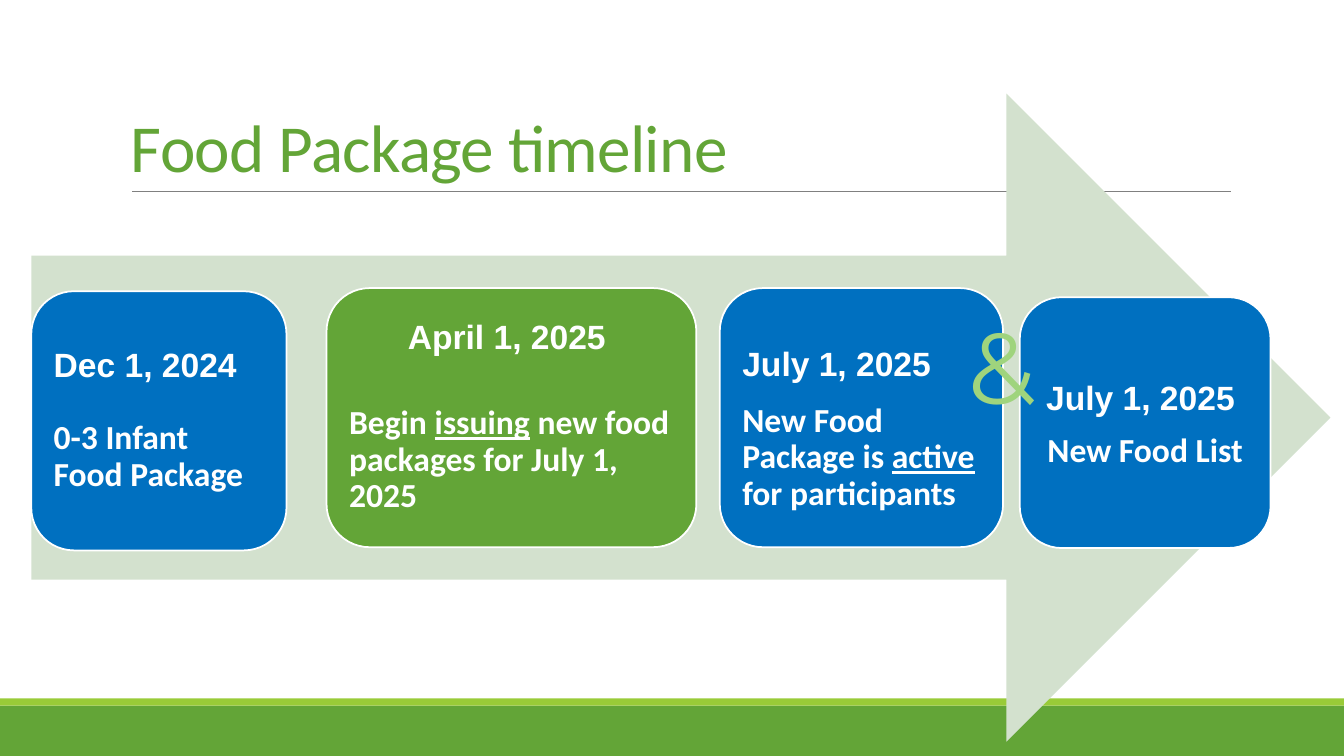
from lxml.etree import SubElement
from pptx import Presentation
from pptx.dml.color import RGBColor
from pptx.enum.shapes import MSO_CONNECTOR, MSO_SHAPE
from pptx.enum.text import MSO_ANCHOR, PP_ALIGN
from pptx.oxml.ns import qn
from pptx.util import Cm, Pt

GREEN = RGBColor(0x63, 0xA5, 0x37)
LIME = RGBColor(0x99, 0xCB, 0x38)
PALE_GREEN = RGBColor(0xD3, 0xE1, 0xCE)
SOFT_GREEN = RGBColor(0x9F, 0xD4, 0x7D)
BLUE = RGBColor(0x00, 0x70, 0xC0)
GREY = RGBColor(0x80, 0x80, 0x80)
WHITE = RGBColor(0xFF, 0xFF, 0xFF)

SLIDE_WIDTH, SLIDE_HEIGHT = 33.87, 19.05
TIGHT = 0.9
AFTER = Pt(8.4)

# Each milestone: left, top, width, height in cm, fill, date format, action format, date, action runs
MILESTONES = [
    (0.79, 7.34, 6.43, 6.53, BLUE,
     {"line_spacing": TIGHT, "space_after": Pt(26)},
     {"line_spacing": TIGHT, "space_after": AFTER},
     "Dec 1, 2024", [("0-3 Infant Food Package", False)]),
    (8.23, 7.26, 9.32, 6.53, GREEN,
     {"line_spacing": TIGHT, "space_after": Pt(35), "alignment": PP_ALIGN.CENTER},
     {"line_spacing": TIGHT, "space_after": AFTER},
     "April 1, 2025 ",
     [("Begin ", False), ("issuing", True), (" new food packages for July 1, 2025", False)]),
    (18.14, 7.26, 7.14, 6.53, BLUE,
     {"line_spacing": 1.5, "space_after": AFTER},
     {"line_spacing": TIGHT, "space_before": Pt(6), "space_after": AFTER},
     "July 1, 2025",
     [("New Food Package is ", False), ("active", True), (" for participants", False)]),
    (25.7, 7.49, 6.32, 6.32, BLUE,
     {"space_after": AFTER, "alignment": PP_ALIGN.CENTER},
     {"space_after": AFTER, "alignment": PP_ALIGN.CENTER},
     "July 1, 2025 ", [("New Food List", False)]),
]


def apply_format(target, values):
    for name, value in values.items():
        setattr(target, name, value)


def add_block(slide, kind, left, top, width, height, fill):
    block = slide.shapes.add_shape(kind, Cm(left), Cm(top), Cm(width), Cm(height))
    block.shadow.inherit = False
    block.fill.solid()
    block.fill.fore_color.rgb = fill
    block.line.fill.background()
    return block


def add_rule(slide, left, right, y):
    rule = slide.shapes.add_connector(MSO_CONNECTOR.STRAIGHT, Cm(left), Cm(y), Cm(right), Cm(y))
    rule.line.color.rgb = GREY
    rule.line.width = Pt(0.5)
    SubElement(rule.element.spPr, qn("a:effectLst"))


def add_run(paragraph, text, color, **font):
    run = paragraph.add_run()
    run.text = text
    run.font.color.rgb = color
    apply_format(run.font, font)
    return run


def add_label(slide, left, top, width, height, text, color, anchor, **font):
    label = slide.shapes.add_textbox(Cm(left), Cm(top), Cm(width), Cm(height))
    apply_format(label.text_frame, {"word_wrap": True, "vertical_anchor": anchor})
    paragraph = label.text_frame.paragraphs[0]
    return paragraph, add_run(paragraph, text, color, **font)


def add_milestone(slide, left, top, width, height, fill, date_format, action_format, date, action):
    card = add_block(slide, MSO_SHAPE.ROUNDED_RECTANGLE, left, top, width, height, fill)
    card.line.color.rgb = WHITE
    card.line.width = Pt(1.25)
    frame = card.text_frame
    apply_format(frame, {"word_wrap": True, "vertical_anchor": MSO_ANCHOR.MIDDLE})
    apply_format(frame, dict.fromkeys(
        ("margin_left", "margin_top", "margin_right", "margin_bottom"), Cm(0.25)))

    date_line, action_line = frame.paragraphs[0], frame.add_paragraph()
    apply_format(date_line, {"alignment": PP_ALIGN.LEFT, **date_format})
    apply_format(action_line, {"alignment": PP_ALIGN.LEFT, **action_format})
    add_run(date_line, date, WHITE, name="Arial", size=Pt(24), bold=True)
    for text, underlined in action:
        add_run(action_line, text, WHITE, name="Calibri", size=Pt(24), bold=True,
                underline=underlined)


def main():
    deck = Presentation()
    deck.slide_width, deck.slide_height = Cm(SLIDE_WIDTH), Cm(SLIDE_HEIGHT)
    slide = deck.slides.add_slide(deck.slide_layouts[6])

    # Footer bands and title rule
    add_block(slide, MSO_SHAPE.RECTANGLE, 0, 17.78, SLIDE_WIDTH, 1.27, GREEN)
    add_block(slide, MSO_SHAPE.RECTANGLE, 0, 17.6, SLIDE_WIDTH, 0.18, LIME)
    add_rule(slide, 3.33, 31.01, 4.83)

    # Title
    heading, heading_run = add_label(slide, 3.05, 0.79, 27.94, 4.04, "Food Package timeline",
                                     GREEN, MSO_ANCHOR.BOTTOM, name="Calibri", size=Pt(48))
    heading.line_spacing = 0.85
    heading_run.font._element.set("spc", "-50")

    # Timeline arrow with its milestones
    add_block(slide, MSO_SHAPE.RIGHT_ARROW, 0.79, 2.36, 32.74, 16.33, PALE_GREEN)
    for milestone in MILESTONES:
        add_milestone(slide, *milestone)

    # Ampersand joining the two July milestones
    add_label(slide, 24.16, 7.54, 3.35, 3.33, "&", SOFT_GREEN, MSO_ANCHOR.TOP,
              name="Montserrat", size=Pt(72))

    deck.save("out.pptx")


if __name__ == "__main__":
    main()
